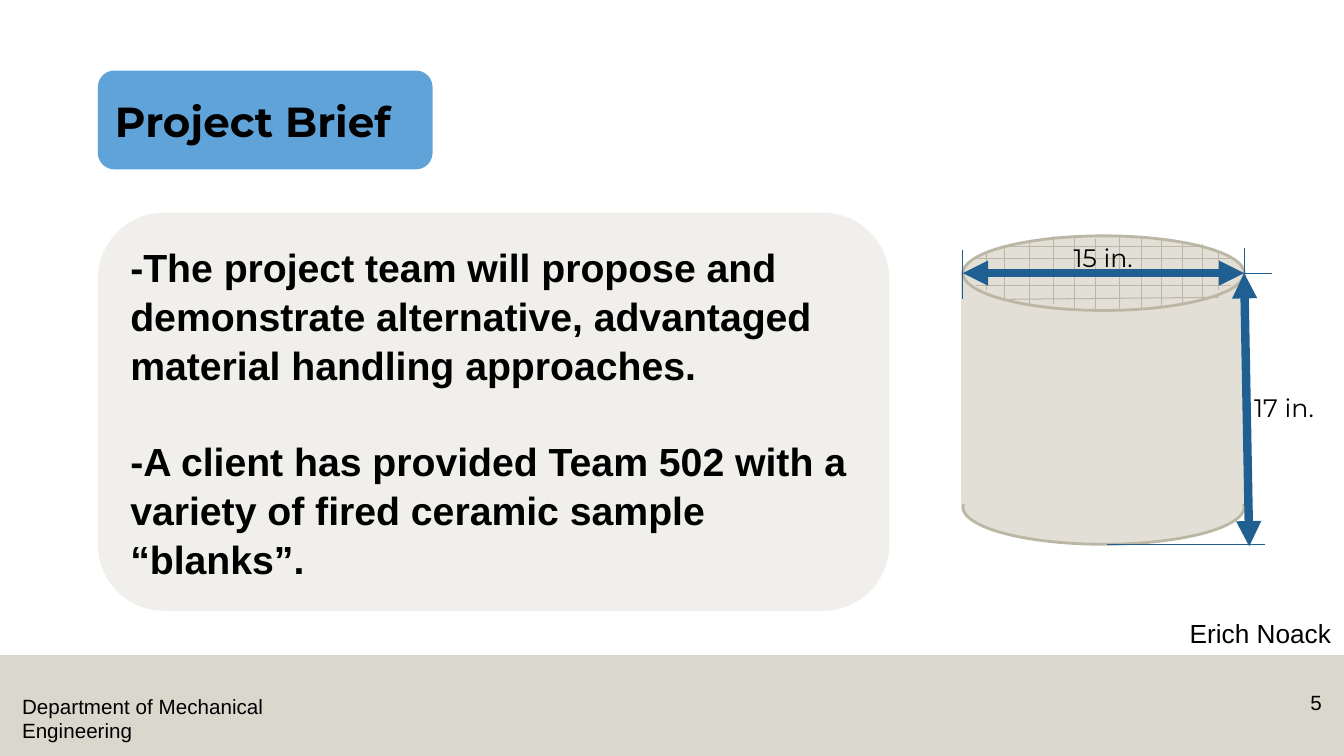
import pptx
import pptx.dml.color
import pptx.enum.shapes
import pptx.enum.text
import pptx.oxml
import pptx.oxml.ns
import pptx.util

Inches = pptx.util.Inches
Pt = pptx.util.Pt
SHAPE = pptx.enum.shapes.MSO_SHAPE
ANCHOR = pptx.enum.text.MSO_ANCHOR
ALIGN = pptx.enum.text.PP_ALIGN
FIT = pptx.enum.text.MSO_AUTO_SIZE

COLORS = {
    "text": "000000",
    "band": "B7B09C",
    "tag": "60A3D9",
    "panel": "F1EFEB",
    "drum": "E2DFD7",
    "edge": "BCB6A4",
    "dimension": "205F91",
}


def color(name):
    """Return the named colour of the slide."""
    return pptx.dml.color.RGBColor.from_string(COLORS[name])


def draw_element(parent, tag, **attributes):
    """Append a drawing element with its attributes."""
    element = pptx.oxml.parse_xml(f"<a:{tag} {pptx.oxml.ns.nsdecls('a')}/>")
    for name, value in attributes.items():
        element.set(name, value)
    parent.append(element)


def write_text(shape, *texts, size, font="Arial", bold=False, align=ALIGN.LEFT,
               anchor=ANCHOR.TOP, inset=None, spacing=None, gap=0, fit=FIT.NONE):
    """Fill a shape with one formatted paragraph for each text."""
    frame = shape.text_frame
    frame.word_wrap = True
    frame.auto_size = fit
    frame.vertical_anchor = anchor
    if inset is not None:
        frame.margin_left = frame.margin_right = Inches(inset)
        frame.margin_top = frame.margin_bottom = Inches(inset)
    for index, text in enumerate(texts):
        para = frame.add_paragraph() if index else frame.paragraphs[0]
        para.alignment = align
        para.space_before = Pt(gap if index else 0)
        if spacing:
            para.line_spacing = spacing
        span = para.add_run()
        span.text = text
        span.font.name = font
        span.font.size = Pt(size)
        span.font.bold = bold
        span.font.color.rgb = color("text")


def add_label(page, box, text, **style):
    """Add a text box with one line of text."""
    label = page.shapes.add_textbox(*map(Inches, box))
    write_text(label, text, **style)


def add_block(shapes, kind, box, fill, edge=None):
    """Add a flat preset shape, outlined only when an edge is named."""
    block = shapes.add_shape(kind, *map(Inches, box))
    block.shadow.inherit = False
    block.fill.solid()
    block.fill.fore_color.rgb = color(fill)
    if edge:
        block.line.color.rgb = color(edge)
        block.line.width = Pt(2)
    else:
        block.line.fill.background()
    return block


def add_line(shapes, start, end, stroke, width=0.75, arrows=False):
    """Add a straight line, with arrowheads at both ends if wanted."""
    line = shapes.add_connector(pptx.enum.shapes.MSO_CONNECTOR.STRAIGHT,
                                *map(Inches, (*start, *end)))
    line.line.color.rgb = color(stroke)
    line.line.width = Pt(width)
    if arrows:
        outline = line.element.spPr.find(pptx.oxml.ns.qn("a:ln"))
        for tag in ("headEnd", "tailEnd"):
            draw_element(outline, tag, type="triangle")
    draw_element(line.element.spPr, "effectLst")


def add_footer(page, box):
    """Draw the translucent footer band with department and page number."""
    left, top, width, height = box
    band = add_block(page.shapes, SHAPE.RECTANGLE, box, "band")
    tint = next(band.element.spPr.iter(pptx.oxml.ns.qn("a:srgbClr")))
    draw_element(tint, "alpha", val="50000")
    add_label(page, (left + 0.12, top + 0.33, 3.59, 0.59),
              "Department of Mechanical Engineering", size=14.7)
    add_label(page, (left + width - 0.67, top + 0.3, 0.55, 0.4), "5",
              size=14.7, align=ALIGN.RIGHT)


def add_heading(page, box):
    """Set the title on its rounded tag."""
    left, top, width, height = box
    tag = add_block(page.shapes, SHAPE.ROUNDED_RECTANGLE, box, "tag")
    title = page.shapes.title
    title.left, title.top = Inches(left + 0.07), Inches(top - 0.29)
    title.width, title.height = Inches(11.5), Inches(1.09)
    write_text(title, "Project Brief", size=30, font="Montserrat", bold=True,
               anchor=ANCHOR.BOTTOM, spacing=0.9)
    tag.element.addnext(title.element)


def add_brief(page, box):
    """Add the rounded panel with the two statements."""
    panel = add_block(page.shapes, SHAPE.ROUNDED_RECTANGLE, box, "panel")
    write_text(
        panel,
        "-The project team will propose and demonstrate alternative, "
        "advantaged material handling approaches.",
        "-A client has provided Team 502 with a variety of fired ceramic "
        "sample “blanks”.",
        size=28, bold=True, anchor=ANCHOR.MIDDLE, inset=0.13,
        spacing=1.04, gap=33.5)


def add_drum(page, box):
    """Draw the cylinder with the cell grid on its upper face."""
    left, top, width, height = box
    face = 0.74
    drum = page.shapes.add_group_shape().shapes
    add_block(drum, SHAPE.OVAL, (left, top + height - face, width, face), "drum", "edge")
    add_block(drum, SHAPE.RECTANGLE, (left, top + face / 2, width, 2.28), "drum", "drum")
    add_block(drum, SHAPE.OVAL, (left, top, width, face), "drum", "edge")
    rows = [(0, 2.78, 0.37, 0.37), (0.13, 2.66, 0.22, 0.22), (0.13, 2.66, 0.49, 0.49),
            (0.41, 2.54, 0.63, 0.61), (0.41, 2.38, 0.11, 0.11)]
    columns = [(0.23, 0.16, 0.54), (0.41, 0.11, 0.63), (0.66, 0.05, 0.68),
               (0.9, 0, 0.68), (1.11, 0, 0.74), (1.32, 0.03, 0.74),
               (1.55, 0, 0.74), (1.77, 0, 0.74), (1.97, 0.03, 0.71),
               (2.18, 0.05, 0.68), (2.38, 0.08, 0.63), (2.54, 0.14, 0.54)]
    cells = [((x1, y1), (x2, y2)) for x1, x2, y1, y2 in rows]
    cells += [((x, y1), (x, y2)) for x, y1, y2 in columns]
    for start, end in cells:
        add_line(drum, (left + start[0], top + start[1]),
                 (left + end[0], top + end[1]), "edge")


def add_dimensions(page, box):
    """Mark the diameter and the height of the drum."""
    left, top, width, height = box
    right, rim, base = left + width, top + 0.37, top + height
    label = {"size": 18, "font": "Montserrat", "fit": FIT.SHAPE_TO_FIT_TEXT}
    add_line(page.shapes, (left, rim), (right, rim), "dimension", 6, True)
    add_label(page, (left + 1, top + 0.02, 1.19, 0.4), "15 in.", **label)
    add_line(page.shapes, (right, rim), (right + 0.05, base + 0.02), "dimension", 6, True)
    guides = [((left, top + 0.14), (left, top + 0.63)),
              ((right, top + 0.12), (right, top + 0.61)),
              ((right - 0.21, rim), (right + 0.28, rim)),
              ((left + 1.43, base), (right + 0.21, base))]
    for start, end in guides:
        add_line(page.shapes, start, end, "dimension")
    add_label(page, (right, top + 1.5, 1.19, 0.4), "17 in.", **label)


def main():
    """Build the project brief slide."""
    deck = pptx.Presentation()
    deck.slide_width, deck.slide_height = Inches(13.33), Inches(7.5)
    page = deck.slides.add_slide(deck.slide_layouts[5])
    drum_box = (9.55, 2.34, 2.79, 3.06)
    add_footer(page, (0, 6.5, 13.33, 1))
    add_heading(page, (0.97, 0.7, 3.32, 0.98))
    add_brief(page, (0.97, 2.11, 7.85, 3.95))
    add_drum(page, drum_box)
    add_dimensions(page, drum_box)
    add_label(page, (11.67, 5.99, 1.69, 0.58), "Erich Noack", size=18.7, inset=0.13,
              fit=FIT.SHAPE_TO_FIT_TEXT)
    deck.save("out.pptx")


if __name__ == "__main__":
    main()
